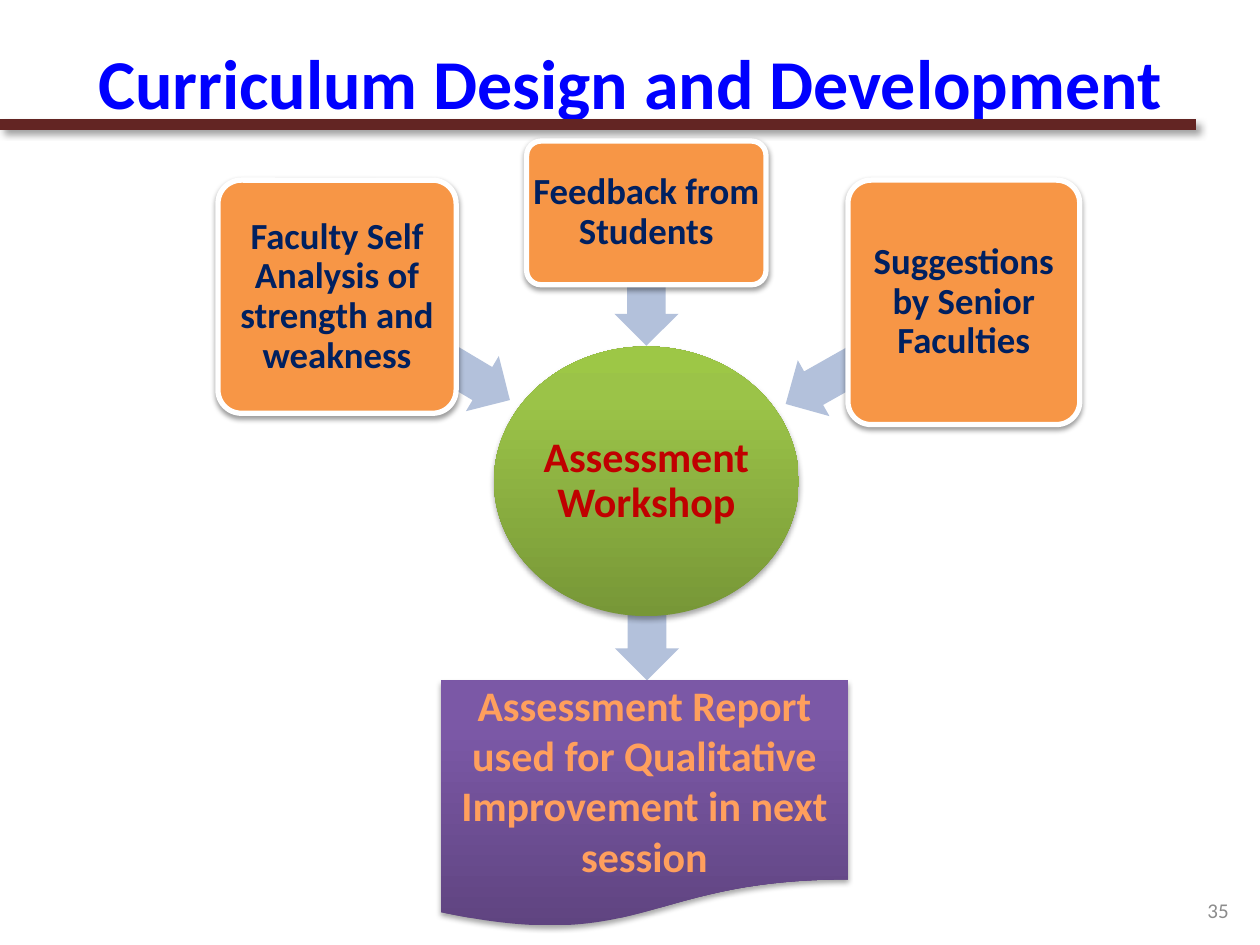
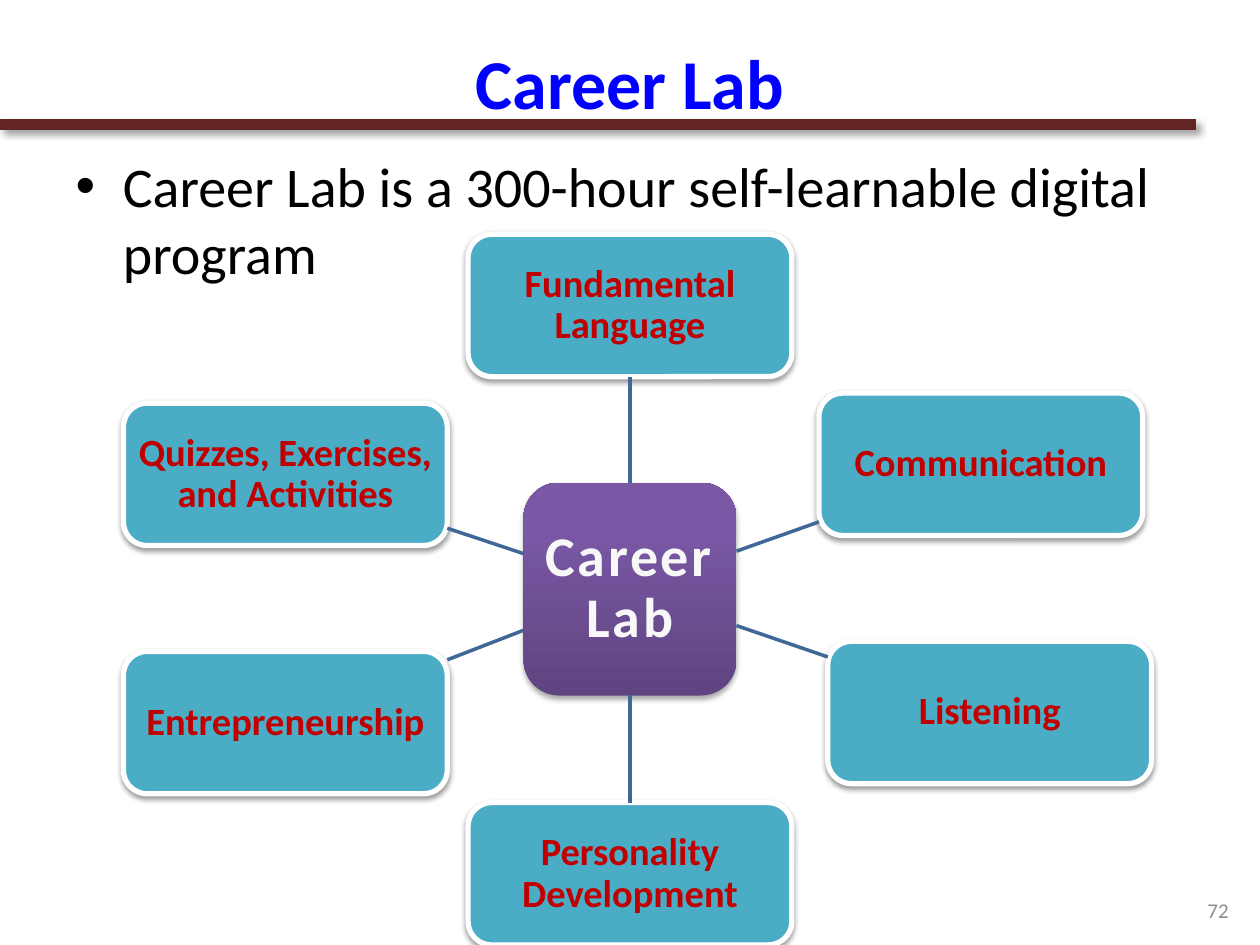
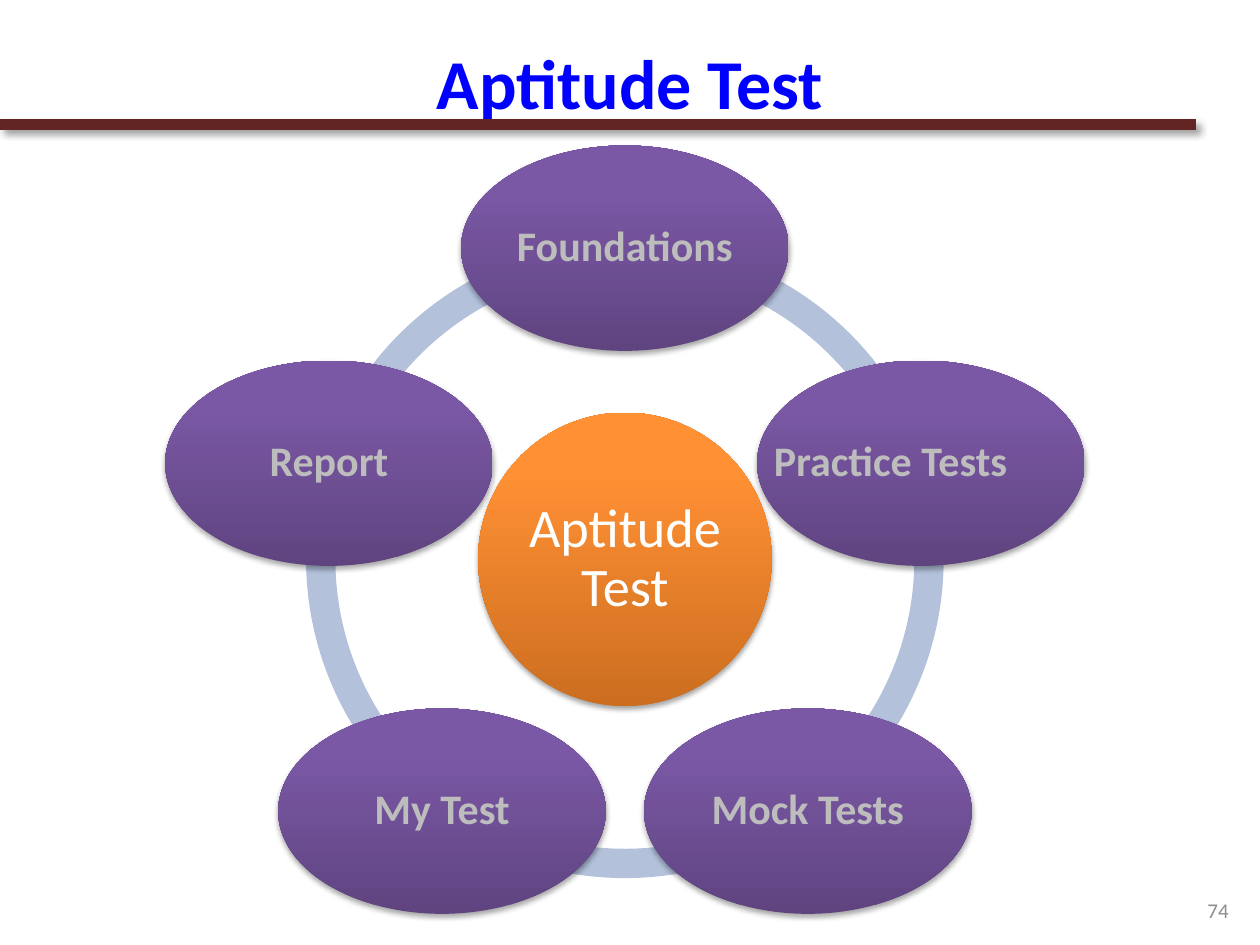
from dataclasses import dataclass
from math import cos, radians, sin
from typing import Any

from lxml import etree
from pptx import Presentation
from pptx.dml.color import RGBColor
from pptx.enum.shapes import MSO_CONNECTOR, MSO_SHAPE
from pptx.enum.text import MSO_ANCHOR, PP_ALIGN
from pptx.oxml.ns import qn
from pptx.util import Inches, Pt

CENTER, RIGHT, MIDDLE = PP_ALIGN.CENTER, PP_ALIGN.RIGHT, MSO_ANCHOR.MIDDLE
ROUND, OVAL, DOCUMENT = MSO_SHAPE.ROUNDED_RECTANGLE, MSO_SHAPE.OVAL, MSO_SHAPE.FLOWCHART_DOCUMENT
LEFT_ARROW, BLOCK_ARC = MSO_SHAPE.LEFT_ARROW, MSO_SHAPE.BLOCK_ARC
STRAIGHT = MSO_CONNECTOR.STRAIGHT
TOP, BOTTOM = 0, 2

# Slide grid: 100 columns by 75 rows of square cells
WIDTH, HEIGHT = Inches(10), Inches(7.5)
CELL = WIDTH // 100

COLORS = {
    "title": "0000FF", "rule": "632523", "number": "8C8C8C", "body": "000000",
    "white": "FFFFFF", "offwhite": "F8F8F8", "navy": "002060", "red": "C00000",
    "peach": "FF9F5D", "silver": "BDBDBD", "orange": "F79646", "teal": "4BACC6",
    "flow": "B3C1DB", "spoke": "3F6797",
}
# Gradient stops from the bottom edge up
GRADIENTS = {
    "purple": ((0, "5F4480"), (80, "7B58A6"), (100, "7C57A8")),
    "green": ((0, "779737"), (80, "9BC348"), (100, "9DC746")),
    "amber": ((0, "CC6E20"), (80, "FF9034"), (100, "FF9136")),
}


@dataclass(frozen=True)
class Box:
    """A rectangle in grid cells."""
    col: float
    row: float
    cols: float
    rows: float

    @property
    def center(self) -> tuple[float, float]:
        return self.col + self.cols / 2, self.row + self.rows / 2

    def emu(self) -> list[int]:
        return [cells(n) for n in (self.col, self.row, self.cols, self.rows)]


@dataclass(frozen=True)
class Shadow:
    alpha: int
    blur: float
    distance: float
    angle: int


@dataclass(frozen=True)
class Style:
    kind: Any
    fill: str
    ink: str = "white"
    size: float = 24
    bold: bool = True
    border: bool = False
    inset: float = 0.01
    spacing: float = 0.9
    adjust: tuple[float, ...] = ()
    shadow: Shadow | None = None


RULE_SHADOW = Shadow(40, 4, 3, 45)
GLOW = Shadow(35, 3.1, 1.8, 90)
CARD_SHADOW = Shadow(38, 3.1, 1.6, 90)

INPUT = Style(ROUND, "orange", "navy", 21, border=True, adjust=(0.1,), shadow=CARD_SHADOW)
WORKSHOP = Style(OVAL, "green", "red", shadow=GLOW)
REPORT = Style(DOCUMENT, "purple", "peach", inset=0.1, spacing=1, shadow=GLOW)
ARROW = Style(LEFT_ARROW, "flow", adjust=(0.6, 0.5))
LAB = Style(ROUND, "purple", "offwhite", 32, shadow=GLOW)
MODULE = Style(ROUND, "teal", "red", 22, border=True, shadow=CARD_SHADOW)
TEST_HUB = Style(OVAL, "amber", "white", 31, bold=False, shadow=GLOW)
STAGE = Style(OVAL, "purple", "silver", shadow=GLOW)


def cells(count: float) -> int:
    return round(count * CELL)


def rgb(name: str) -> RGBColor:
    return RGBColor.from_string(COLORS[name])


def assign(target: Any, values: dict[str, Any]) -> None:
    for attribute, value in values.items():
        setattr(target, attribute, value)


def place(shape: Any, box: Box) -> None:
    assign(shape, dict(zip(("left", "top", "width", "height"), box.emu())))


def add_color(parent: Any, value: str) -> Any:
    return etree.SubElement(parent, qn("a:srgbClr"), val=value)


def set_shadow(shape: Any, shadow: Shadow | None) -> None:
    properties = shape._element.spPr
    effects = properties.find(qn("a:effectLst"))
    if effects is None:
        effects = etree.SubElement(properties, qn("a:effectLst"))
    if shadow:
        outer = etree.SubElement(
            effects, qn("a:outerShdw"), blurRad=str(Pt(shadow.blur)),
            dist=str(Pt(shadow.distance)), dir=str(shadow.angle * 60000),
            algn="ctr", rotWithShape="0")
        etree.SubElement(add_color(outer, "000000"), qn("a:alpha"), val=str(shadow.alpha * 1000))


def set_fill(shape: Any, name: str) -> None:
    if name in COLORS:
        shape.fill.solid()
        shape.fill.fore_color.rgb = rgb(name)
        return
    shape.fill.gradient()
    shape.fill.gradient_angle = 90
    stops = shape._element.spPr.find(qn("a:gradFill")).find(qn("a:gsLst"))
    for stop in list(stops):
        stops.remove(stop)
    for position, value in GRADIENTS[name]:
        add_color(etree.SubElement(stops, qn("a:gs"), pos=str(position * 1000)), value)


def write(shape: Any, text: str, ink: str, size: float, bold: bool = False,
          align: Any = CENTER, spacing: float | None = None) -> Any:
    frame = shape.text_frame
    frame.word_wrap = True
    paragraph = frame.paragraphs[0]
    assign(paragraph, {"alignment": align, "line_spacing": spacing})
    run = paragraph.add_run()
    run.text = text
    assign(run.font, {"name": "Calibri", "size": Pt(size), "bold": bold})
    run.font.color.rgb = rgb(ink)
    return run


def add_block(slide: Any, box: Box, style: Style, text: str = "", rotation: float = 0) -> Any:
    block = slide.shapes.add_shape(style.kind, *box.emu())
    block.rotation = rotation
    block.shadow.inherit = False
    for index, value in enumerate(style.adjust):
        block.adjustments[index] = value
    set_fill(block, style.fill)
    if style.border:
        block.line.color.rgb = rgb("white")
        block.line.width = Pt(3)
    else:
        block.line.fill.background()
    set_shadow(block, style.shadow)
    if text:
        margins = ("margin_left", "margin_top", "margin_right", "margin_bottom")
        assign(block.text_frame, dict.fromkeys(margins, Inches(style.inset)))
        block.text_frame.vertical_anchor = MIDDLE
        write(block, text, style.ink, style.size, style.bold, spacing=style.spacing)
    return block


def add_line(slide: Any, start: tuple[float, float], end: tuple[float, float],
             color: str, width: float, shadow: Shadow | None = None) -> Any:
    line = slide.shapes.add_connector(STRAIGHT, *(cells(n) for n in (*start, *end)))
    line.line.color.rgb = rgb(color)
    line.line.width = Pt(width)
    set_shadow(line, shadow)
    return line


def add_slide(deck: Any, layout: int, title: str, number: int) -> Any:
    """Start a slide with the shared rule, title and slide number."""
    slide = deck.slides.add_slide(deck.slide_layouts[layout])
    add_line(slide, (0, 9.9), (94.9, 9.9), "rule", 6, RULE_SHADOW)
    place(slide.shapes.title, Box(5, 3, 90, 6.9))
    slide.shapes.title.text_frame.vertical_anchor = MIDDLE
    write(slide.shapes.title, title, "title", 40, True)
    number_box = slide.shapes.add_textbox(*Box(75.2, 70.6, 23.3, 3.2).emu())
    number_box.text_frame.vertical_anchor = MIDDLE
    write(number_box, str(number), "number", 12, align=RIGHT)
    return slide


def edge_point(box: Box, toward: Box) -> tuple[float, float]:
    """Where the line between two box centres leaves the first box."""
    (x, y), (to_x, to_y) = box.center, toward.center
    dx, dy = to_x - x, to_y - y
    share = 1 / max(abs(dx) / (box.cols / 2), abs(dy) / (box.rows / 2))
    return x + dx * share, y + dy * share


def build_curriculum(deck: Any) -> None:
    slide = add_slide(deck, 5, "Curriculum Design and Development", 35)
    # Arrows run behind the blocks they join
    arrows = (
        (Box(48.2, 48.3, 6.3, 5.1), 270),
        (Box(25.6, 25.1, 16, 5.1), 210.8),
        (Box(46.3, 19.9, 10, 5.1), 270),
        (Box(61.3, 25.5, 16.3, 5.1), 330.5),
    )
    for box, rotation in arrows:
        add_block(slide, box, ARROW, rotation=rotation)
    blocks = (
        (Box(35, 54, 32.3, 19.7), REPORT,
         "Assessment Report used for Qualitative Improvement in next session"),
        (Box(39.2, 27.5, 24.2, 21.4), WORKSHOP, "Assessment Workshop"),
        (Box(17.3, 14.3, 18.9, 18.5), INPUT, "Faculty Self Analysis of strength and weakness"),
        (Box(41.8, 11.2, 19, 11.4), INPUT, "Feedback from Students"),
        (Box(67.3, 14.3, 18.4, 19.4), INPUT, "Suggestions by Senior Faculties"),
    )
    for box, style, text in blocks:
        add_block(slide, box, style, text)


def build_career_lab(deck: Any) -> None:
    slide = add_slide(deck, 1, "Career Lab", 72)
    summary = slide.placeholders[1]
    place(summary, Box(5, 11.5, 90, 59.1))
    write(summary, "Career Lab is a 300-hour self-learnable digital program", "body", 32, align=None)

    # Hub and the six modules around it
    lab_box = Box(41.55, 38.3, 16.9, 16.9)
    lab = add_block(slide, lab_box, LAB, "Career Lab")
    lab.text_frame.paragraphs[0].runs[0].font._element.set("spc", "150")
    modules = (
        (37.15, 18.6, "Fundamental Language"),
        (65, 31.2, "Communication"),
        (65.7, 50.9, "Listening"),
        (37.15, 63.7, "Personality Development"),
        (9.8, 51.7, "Entrepreneurship"),
        (9.8, 32, "Quizzes, Exercises, and Activities"),
    )
    for col, row, text in modules:
        box = Box(col, row, 25.7, 11.3)
        module = add_block(slide, box, MODULE, text)
        spoke = add_line(slide, edge_point(lab_box, box), edge_point(box, lab_box), "spoke", 2)
        if abs(box.center[0] - lab_box.center[0]) < 0.1:
            above = row < lab_box.row
            spoke.begin_connect(lab, TOP if above else BOTTOM)
            spoke.end_connect(module, BOTTOM if above else TOP)


def build_aptitude_test(deck: Any) -> None:
    slide = add_slide(deck, 5, "Aptitude Test", 74)
    stages = ("Foundations", "Practice Tests", "Mock Tests", "My Test", "Report")
    step = 360 / len(stages)
    angles = [(270 + step * index) % 360 for index in range(len(stages))]
    ring = Box(24.3, 19.1, 50.6, 50.6)
    center_x, center_y = ring.center
    orbit = 24.7

    # Ring of arcs; an angle adjustment counts 0.6 per degree
    for angle in angles:
        ends = (angle * 0.6, (angle + step) % 360 * 0.6)
        add_block(slide, ring, Style(BLOCK_ARC, "flow", adjust=(*ends, 0.046)))
    add_block(slide, Box(center_x - 11.65, center_y - 11.65, 23.3, 23.3), TEST_HUB, "Aptitude Test")

    # Stages evenly spaced on the ring
    for angle, text in zip(angles, stages):
        x = center_x + orbit * cos(radians(angle))
        y = center_y + orbit * sin(radians(angle))
        stage = add_block(slide, Box(x - 13, y - 8.15, 26, 16.3), STAGE, text)
        stage.text_frame.word_wrap = False
        if text == "Practice Tests":
            assign(stage.text_frame, {"margin_left": Inches(-0.24), "margin_right": Inches(0.24)})


def main() -> None:
    deck = Presentation()
    assign(deck, {"slide_width": WIDTH, "slide_height": HEIGHT})
    build_curriculum(deck)
    build_career_lab(deck)
    build_aptitude_test(deck)
    deck.save("out.pptx")


if __name__ == "__main__":
    main()
